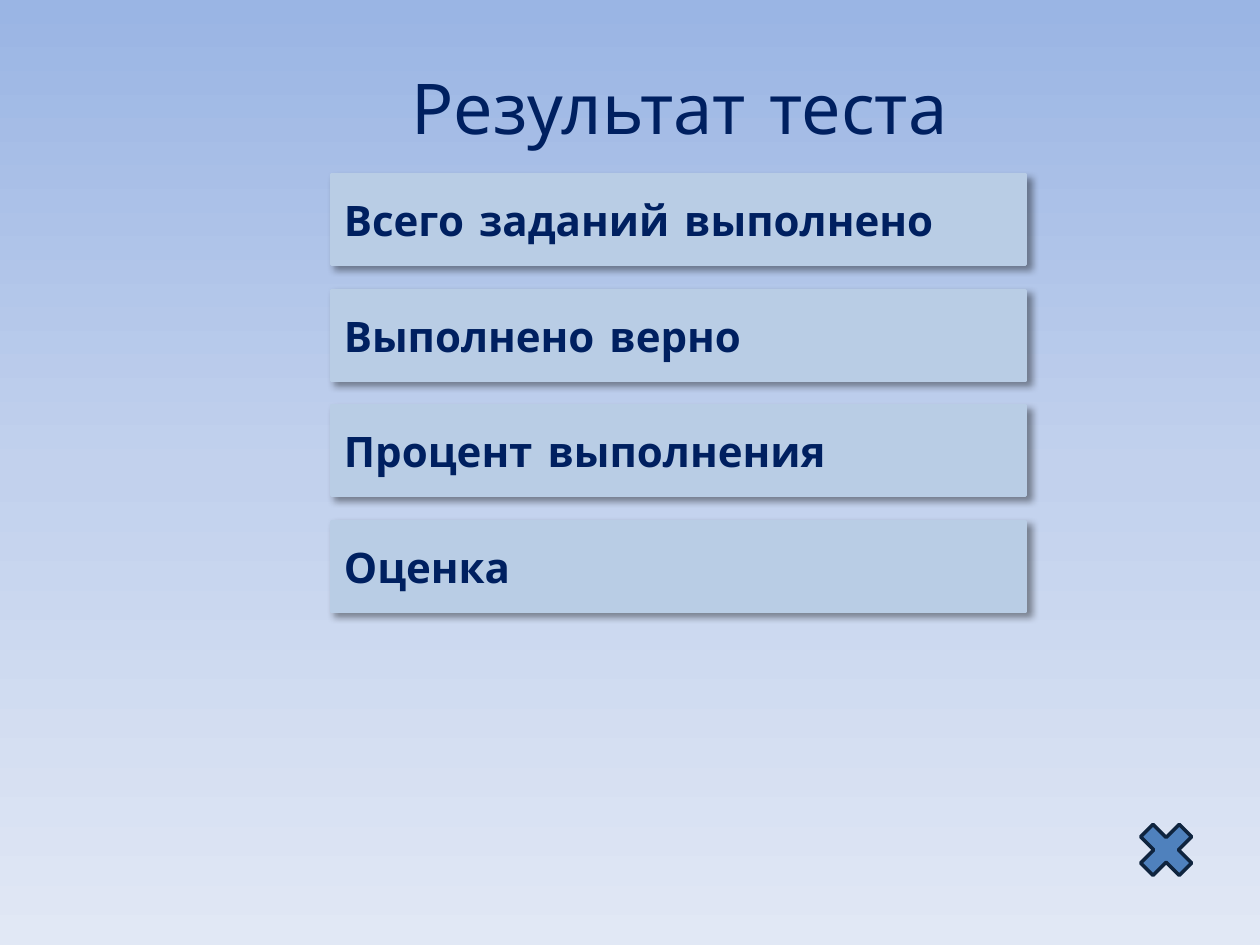
from copy import deepcopy

from lxml import etree
from pptx import Presentation
from pptx.dml.color import RGBColor
from pptx.enum import shapes, text
from pptx.oxml import ns
from pptx.util import Pt

FONT = "Comic Neue"
COLORS = {
    "sky_top": "9AB5E4",
    "sky_middle": "C2D1ED",
    "sky_bottom": "E1E8F5",
    "text": "002060",
    "bar": "B9CDE5",
    "cross": "4F81BD",
    "cross_line": "0F243E",
    "shadow": "000000",
}
RESULTS = ["Всего заданий выполнено", "Выполнено верно", "Процент выполнения", "Оценка"]
BAR_LEFT, BAR_TOP, BAR_WIDTH, BAR_HEIGHT, BAR_STEP = 189.4, 100.1, 396.7, 51.1, 66


def color(name):
    return RGBColor.from_string(COLORS[name])


def paint_background(slide):
    fill = slide.background.fill
    fill.gradient()
    fill.gradient_angle = 270
    # A new gradient has two stops; add the middle one
    stop_list = slide.element.find(".//" + ns.qn("a:gsLst"))
    stop_list.insert(1, deepcopy(stop_list[0]))
    names = ("sky_top", "sky_middle", "sky_bottom")
    for stop, position, name in zip(fill.gradient_stops, (0, 0.5, 1), names):
        stop.position = position
        stop.color.rgb = color(name)


def write_text(shape, words, size, align, bold=False):
    frame = shape.text_frame
    frame.word_wrap = True
    frame.vertical_anchor = text.MSO_ANCHOR.MIDDLE
    paragraph = frame.paragraphs[0]
    paragraph.text = words
    paragraph.alignment = align
    font = paragraph.font
    font.name, font.size, font.bold = FONT, Pt(size), bold
    font.color.rgb = color("text")


def add_title(slide, words):
    title = slide.shapes.add_textbox(Pt(133.2), Pt(21.6), Pt(510.5), Pt(78.5))
    write_text(title, words, 40, text.PP_ALIGN.CENTER)


def add_outlined_shape(slide, kind, box, fill, line):
    shape = slide.shapes.add_shape(kind, *map(Pt, box))
    shape.shadow.inherit = False
    shape.fill.solid()
    shape.fill.fore_color.rgb = color(fill)
    shape.line.color.rgb = color(line)
    shape.line.width = Pt(2)
    return shape


def cast_shadow(shape):
    effects = shape.element.spPr.find(ns.qn("a:effectLst"))
    shadow = etree.SubElement(
        effects, ns.qn("a:outerShdw"), blurRad=str(Pt(4)), dist=str(Pt(3)),
        dir=str(45 * 60000), algn="tl", rotWithShape="0")
    tint = etree.SubElement(shadow, ns.qn("a:srgbClr"), val=COLORS["shadow"])
    etree.SubElement(tint, ns.qn("a:alpha"), val="40000")


def add_result_bar(slide, row, words):
    box = (BAR_LEFT, BAR_TOP + row * BAR_STEP, BAR_WIDTH, BAR_HEIGHT)
    bar = add_outlined_shape(slide, shapes.MSO_SHAPE.RECTANGLE, box, "bar", "bar")
    cast_shadow(bar)
    write_text(bar, words, 24, text.PP_ALIGN.LEFT, bold=True)


def main():
    deck = Presentation()
    deck.slide_width, deck.slide_height = Pt(720), Pt(540)
    slide = deck.slides.add_slide(deck.slide_layouts[6])
    paint_background(slide)

    # Heading and result rows
    add_title(slide, "Результат теста")
    for row, words in enumerate(RESULTS):
        add_result_bar(slide, row, words)

    # Closing cross
    add_outlined_shape(slide, shapes.MSO_SHAPE.MATH_MULTIPLY,
                       (645.1, 464.4, 42.5, 42.5), "cross", "cross_line")
    deck.save("out.pptx")


if __name__ == "__main__":
    main()
